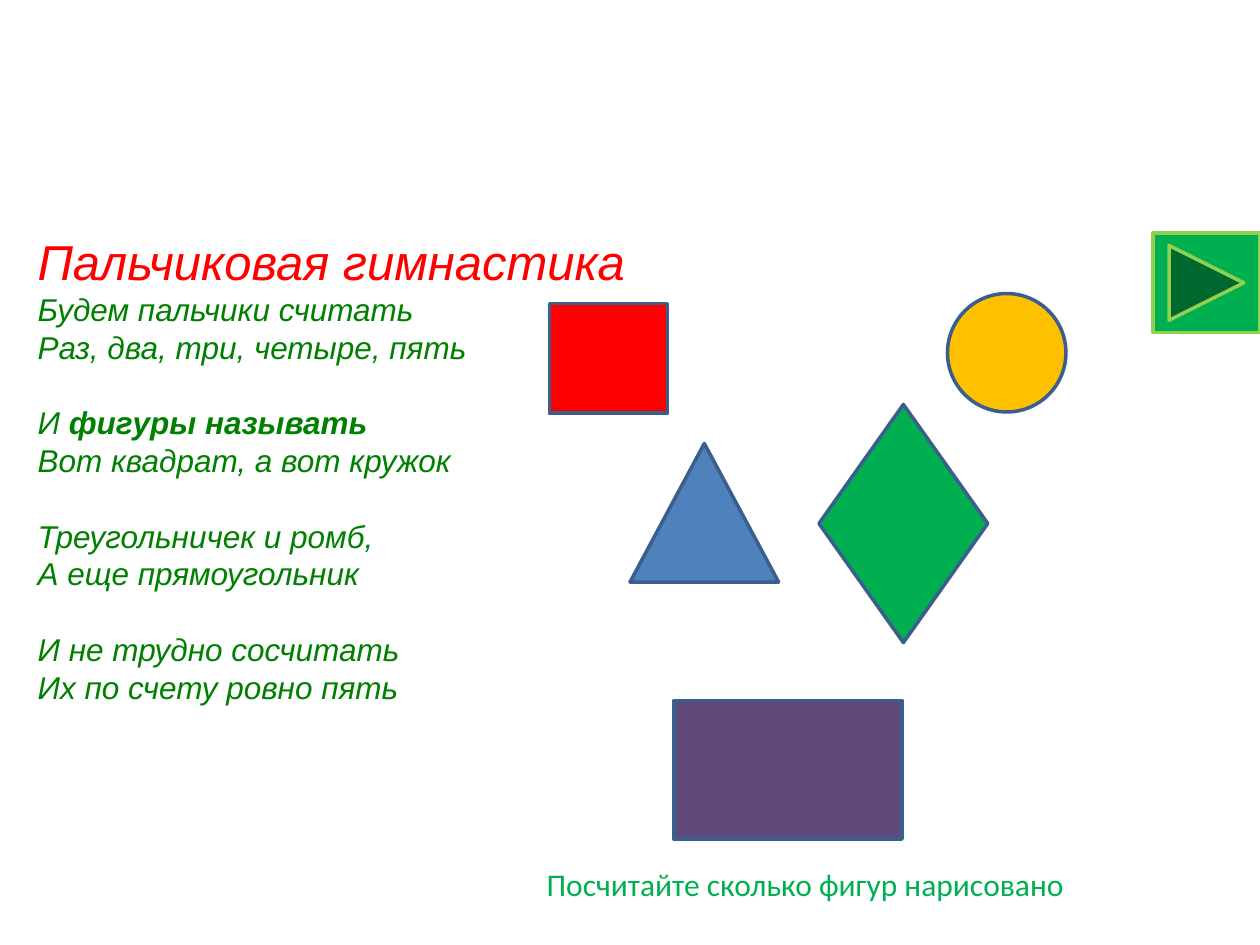
from dataclasses import dataclass

from pptx import Presentation
from pptx.dml.color import RGBColor
from pptx.enum.shapes import MSO_SHAPE
from pptx.util import Inches, Pt

RECT = MSO_SHAPE.RECTANGLE
OVAL = MSO_SHAPE.OVAL
TRIANGLE = MSO_SHAPE.ISOSCELES_TRIANGLE
DIAMOND = MSO_SHAPE.DIAMOND
NEXT = MSO_SHAPE.ACTION_BUTTON_FORWARD_OR_NEXT
RED, GREEN, LEAF, NAVY = "FF0000", "00B050", "008000", "3A5F8C"
PITCH = 21.6


@dataclass
class Figure:
    kind: MSO_SHAPE
    left: float
    top: float
    width: float
    height: float
    fill: str
    line: str = NAVY


@dataclass
class Style:
    font: str
    size: float
    color: str
    slant: bool = False


FIGURES = [
    Figure(RECT, 4.36, 2.41, 0.94, 0.87, RED),
    Figure(OVAL, 7.52, 2.33, 0.94, 0.94, "FFC000"),
    Figure(TRIANGLE, 5, 3.52, 1.18, 1.1, "4F81BD"),
    Figure(DIAMOND, 6.5, 3.21, 1.34, 1.89, GREEN),
    Figure(RECT, 5.35, 5.56, 1.81, 1.1, "604A7B"),
    Figure(NEXT, 9.15, 1.85, 0.85, 0.79, GREEN, "92D050"),
]
TITLE = Style("Arial", 28, RED, True)
VERSE = Style("Arial", 18, LEAF, True)
TASK = Style("Calibri", 18, GREEN)
POEM = [
    [["Будем пальчики считать"], ["Раз, два, три, четыре, пять"]],
    [["И ", "фигуры называть"], ["Вот квадрат, а вот кружок"]],
    [["Треугольничек и ромб,"], ["А еще прямоугольник"]],
    [["И не трудно сосчитать"], ["Их по счету ровно пять"]],
]


def rgb(code: str) -> RGBColor:
    return RGBColor.from_string(code)


def add_box(slide, left: float, top: float, width: float, height: float):
    box = slide.shapes.add_textbox(
        Inches(left), Inches(top), Inches(width), Inches(height))
    box.text_frame.word_wrap = True
    return box.text_frame


def add_run(para, text: str, style: Style, bold: bool = False) -> None:
    run = para.add_run()
    run.text = text
    font = run.font
    font.name = style.font
    font.size = Pt(style.size)
    font.color.rgb = rgb(style.color)
    font.italic = style.slant
    font.bold = bold


def add_figure(slide, item: Figure) -> None:
    shape = slide.shapes.add_shape(
        item.kind, Inches(item.left), Inches(item.top),
        Inches(item.width), Inches(item.height))
    shape.shadow.inherit = False
    shape.fill.solid()
    shape.fill.fore_color.rgb = rgb(item.fill)
    shape.line.color.rgb = rgb(item.line)
    shape.line.width = Pt(2)


def add_poem(slide) -> None:
    frame = add_box(slide, 0.2, 1.78, 5.04, 3.9)
    head = frame.paragraphs[0]
    head.line_spacing = Pt(34)
    add_run(head, "Пальчиковая гимнастика", TITLE)
    for part, stanza in enumerate(POEM):
        for row, words in enumerate(stanza):
            para = frame.add_paragraph()
            para.line_spacing = Pt(PITCH)
            if part and not row:
                para.space_before = Pt(PITCH)
            for spot, text in enumerate(words):
                add_run(para, text, VERSE, bold=spot > 0)


def main() -> None:
    deck = Presentation()
    deck.slide_width, deck.slide_height = Inches(10), Inches(7.5)
    slide = deck.slides.add_slide(deck.slide_layouts[6])
    add_poem(slide)
    for item in FIGURES:
        add_figure(slide, item)
    task = add_box(slide, 4.24, 6.82, 4.51, 0.4)
    add_run(task.paragraphs[0], "Посчитайте сколько фигур нарисовано", TASK)
    deck.save("out.pptx")


if __name__ == "__main__":
    main()
